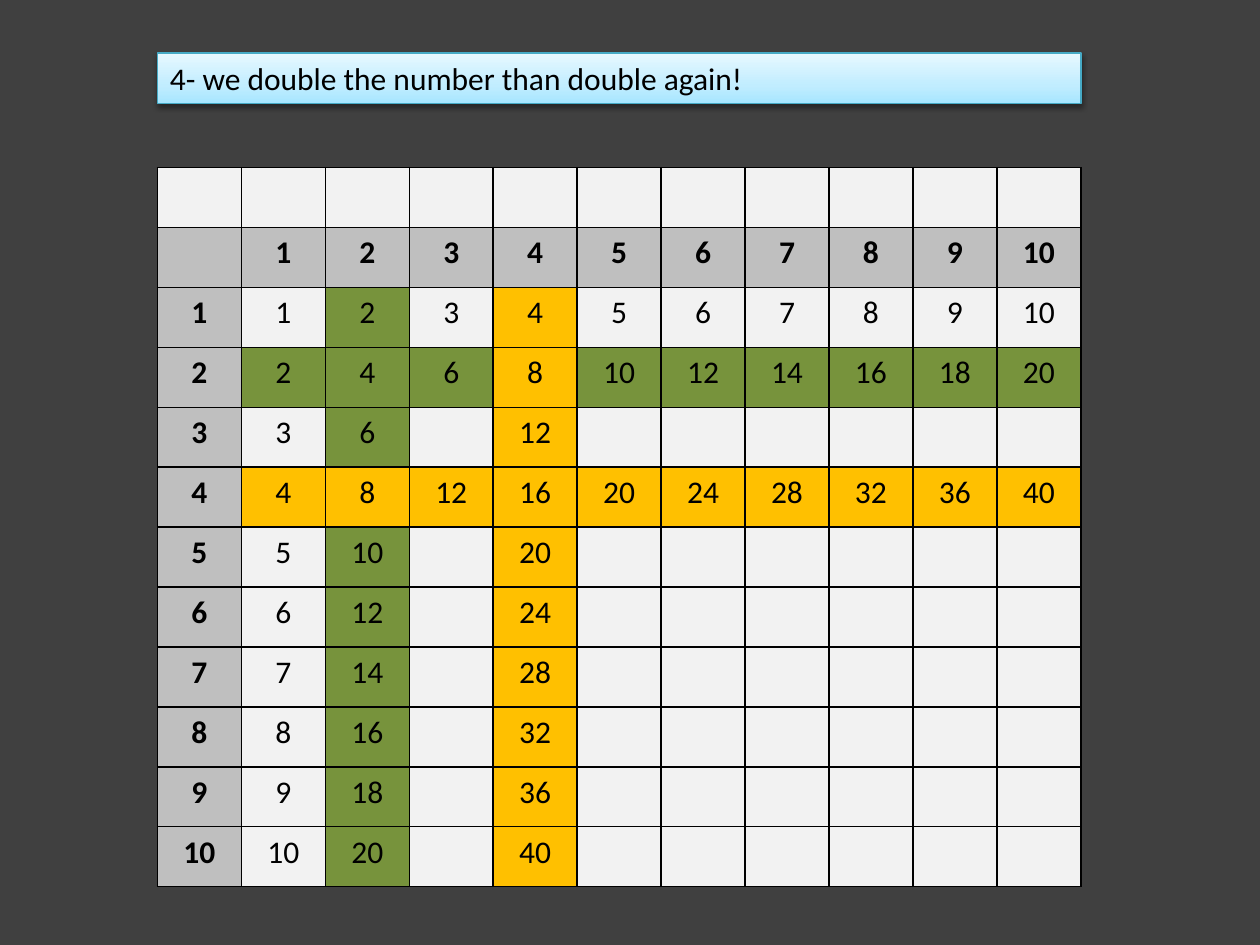
from lxml import etree
from pptx import Presentation, util as u
from pptx.dml.color import RGBColor
from pptx.enum import shapes, text
from pptx.oxml import parse_xml
from pptx.oxml.ns import nsdecls, qn

GREY, LIGHT, GREEN, AMBER = "BFBFBF", "F2F2F2", "77933C", "FFC000"
SIZE = 10


def rgb(value):
    """Return the colour for a hex string."""
    return RGBColor.from_string(value)


def set_text(tf, words, size=18, bold=False, color="000000", font="Calibri", align=None):
    """Write one formatted run into the first paragraph of a text frame."""
    p = tf.paragraphs[0]
    p.alignment = align
    r = p.add_run()
    r.text = words
    r.font.size, r.font.bold, r.font.name = u.Pt(size), bold, font
    r.font.color.rgb = rgb(color)


def set_borders(cell, color="000000", width=1):
    """Draw a solid line on all four sides of a cell."""
    tc_pr = cell._tc.get_or_add_tcPr()
    for i, side in enumerate(("lnL", "lnR", "lnT", "lnB")):
        ln = etree.Element(qn(f"a:{side}"), w=str(u.Pt(width)))
        solid = etree.SubElement(ln, qn("a:solidFill"))
        etree.SubElement(solid, qn("a:srgbClr"), val=color)
        tc_pr.insert(i, ln)


def cell_style(row, col):
    """Return the words, fill and boldness of a cell in the times table."""
    if row < 0:
        return "", LIGHT, False
    if row == 0 or col == 0:
        return str(row or col or ""), GREY, True
    if 4 in (row, col):
        fill = AMBER
    elif 2 in (row, col):
        fill = GREEN
    else:
        fill = LIGHT
    shown = fill != LIGHT or row == 1 or col == 1
    return str(row * col) if shown else "", fill, False


def add_times_table(s, left, top, width, height):
    """Place the multiplication table with a blank row above its header."""
    rows, cols = SIZE + 2, SIZE + 1
    table = s.shapes.add_table(rows, cols, left, top, width, height).table
    for column in table.columns:
        column.width = int(width / cols)
    for i, row in enumerate(table.rows):
        row.height = int(height / rows)
        for j, cell in enumerate(row.cells):
            words, fill, bold = cell_style(i - 1, j)
            cell.fill.solid()
            cell.fill.fore_color.rgb = rgb(fill)
            set_borders(cell)
            if words:
                set_text(cell.text_frame, words, bold=bold, align=text.PP_ALIGN.CENTER)


def add_rule_banner(s, left, top, width, height):
    """Place the gradient banner that states the doubling rule."""
    sp = s.shapes.add_shape(shapes.MSO_SHAPE.RECTANGLE, left, top, width, height)
    sp.line.color.rgb = rgb("46AAC5")
    sp.line.width = u.Pt(0.75)
    sp.fill.gradient()
    sp.fill.gradient_angle = 90
    stops = sp._element.spPr.find(qn("a:gradFill")).find(qn("a:gsLst"))
    for stop in list(stops):
        stops.remove(stop)
    for position, color in ((0, "A7E6FF"), (35, "C1EDFF"), (100, "E7F8FF")):
        stop = etree.SubElement(stops, qn("a:gs"), pos=str(position * 1000))
        etree.SubElement(stop, qn("a:srgbClr"), val=color)
    sp._element.spPr.append(parse_xml(
        f'<a:effectLst {nsdecls("a")}><a:outerShdw blurRad="{u.Pt(3.1)}" '
        f'dist="{u.Pt(1.6)}" dir="5400000" rotWithShape="0"><a:srgbClr val="000000">'
        '<a:alpha val="38000"/></a:srgbClr></a:outerShdw></a:effectLst>'))
    tf = sp.text_frame
    tf.word_wrap = True
    tf.auto_size = text.MSO_AUTO_SIZE.SHAPE_TO_FIT_TEXT
    tf.vertical_anchor = text.MSO_ANCHOR.TOP
    set_text(tf, "4- we double the number than double again!", align=text.PP_ALIGN.LEFT)


def main():
    """Build and save the slide."""
    prs = Presentation()
    prs.slide_width, prs.slide_height = u.Inches(10), u.Inches(7.5)
    s = prs.slides.add_slide(prs.slide_layouts[6])
    s.background.fill.solid()
    s.background.fill.fore_color.rgb = rgb("404040")
    left, width = u.Inches(1.25), u.Inches(7.33)
    add_times_table(s, left, u.Inches(1.33), width, u.Inches(5.71))
    add_rule_banner(s, left, u.Inches(0.42), width, u.Inches(0.4))
    prs.save("out.pptx")


if __name__ == "__main__":
    main()
